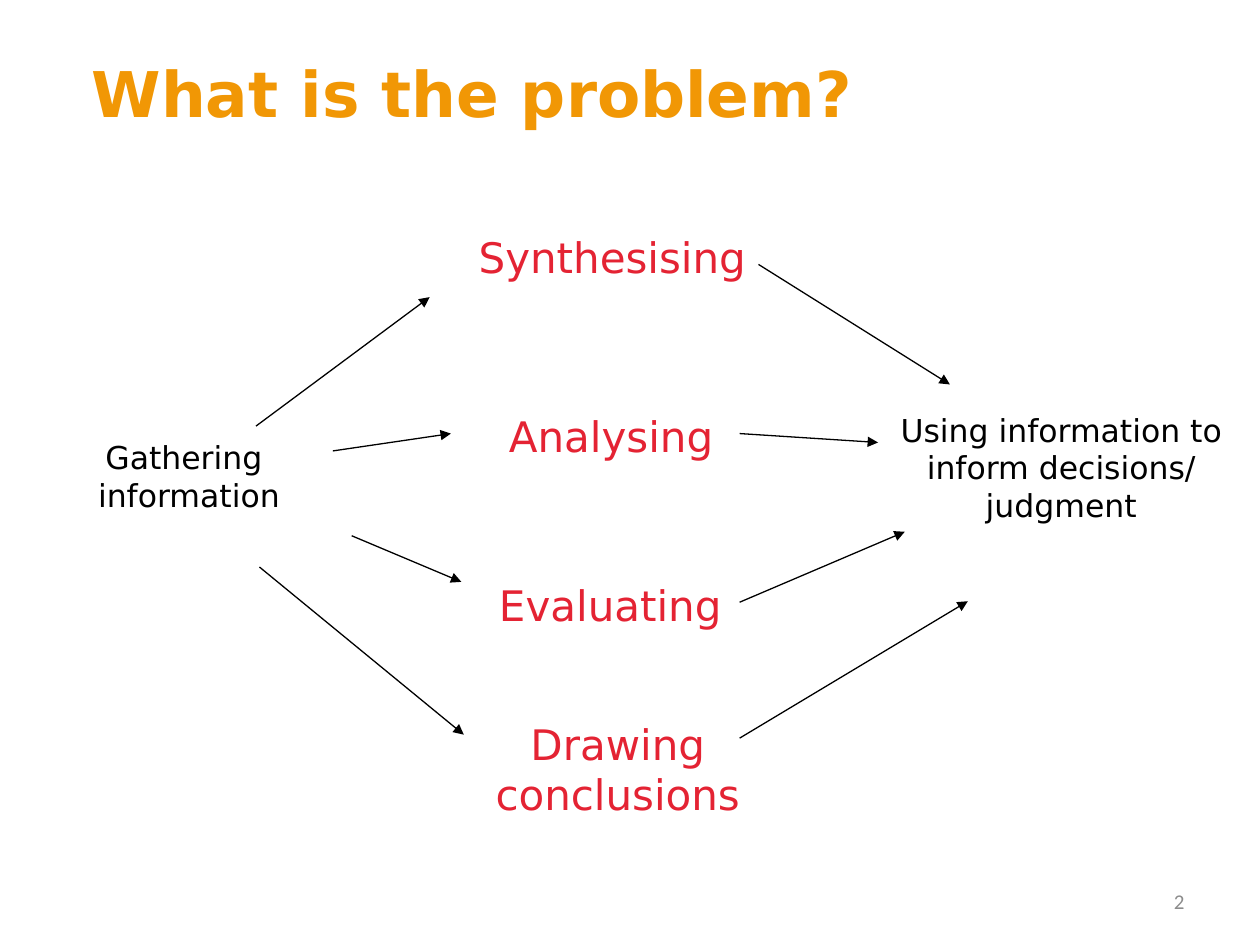
"""Build the slide that leads from gathering information to a judgment."""
from lxml.etree import SubElement
from pptx import Presentation
from pptx.dml.color import RGBColor
from pptx.enum.shapes import MSO_CONNECTOR as Connector
from pptx.enum.text import MSO_ANCHOR as Anchor, MSO_AUTO_SIZE as AutoSize, PP_ALIGN as Align
from pptx.oxml.ns import qn
from pptx.util import Cm, Pt

ORANGE = RGBColor(0xF1, 0x97, 0x05)
RED = RGBColor(0xE4, 0x23, 0x33)
BLACK = RGBColor(0x00, 0x00, 0x00)
GREY = RGBColor(0x8C, 0x8C, 0x8C)
BODY_FONT = "DejaVu Sans"
NUMBER_FONT = "Calibri"
INSET = Cm(0.15)

ENDPOINTS = [
    (["Gathering ", "information"], (0, 8.69, 7.62, 2.64)),
    (["Using information to inform decisions/ judgment"], (17.7, 8.13, 7.39, 3.38)),
]
STEPS = [
    ("Synthesising", (9.5, 4.52, 5.97, 1.35), Align.LEFT),
    ("Drawing conclusions", (9.7, 14.33, 5.51, 2.36), Align.CENTER),
    ("Evaluating", (9.91, 11.53, 5, 1.35), Align.LEFT),
    ("Analysing", (10.11, 8.13, 4.65, 1.35), Align.LEFT),
]
ARROWS = [
    ((5.16, 8.59), (8.66, 5.99)),
    ((5.23, 11.43), (9.35, 14.81)),
    ((6.71, 9.09), (9.09, 8.74)),
    ((7.09, 10.8), (9.3, 11.73)),
    ((14.91, 12.14), (18.24, 10.72)),
    ((14.91, 8.74), (17.7, 8.92)),
    ((14.91, 14.88), (19.51, 12.12)),
    ((15.29, 5.33), (19.15, 7.75)),
]


def set_insets(frame):
    """Give a text frame the same narrow margin on every side."""
    frame.margin_left = frame.margin_right = INSET
    frame.margin_top = frame.margin_bottom = INSET


def add_run(paragraph, wording, size, color, font=BODY_FONT, bold=False):
    """Append one formatted run to a paragraph."""
    run = paragraph.add_run()
    run.text = wording
    run.font.name, run.font.size, run.font.bold = font, Pt(size), bold
    run.font.color.rgb = color


def set_title(slide, wording):
    """Place and format the title placeholder."""
    title = slide.shapes.title
    title.left, title.top, title.width, title.height = map(Cm, (1.7, 1.12, 21.34, 2.97))
    frame = title.text_frame
    set_insets(frame)
    frame.auto_size = AutoSize.NONE
    frame.vertical_anchor = Anchor.TOP
    heading = frame.paragraphs[0]
    heading.alignment = Align.LEFT
    heading.line_spacing = 0.9
    add_run(heading, wording, 36, ORANGE, bold=True)


def add_label(slide, lines, box, size, color, align):
    """Add a wrapped label with one paragraph per line."""
    frame = slide.shapes.add_textbox(*map(Cm, box)).text_frame
    frame.word_wrap = True
    set_insets(frame)
    for index, line in enumerate(lines):
        paragraph = frame.add_paragraph() if index else frame.paragraphs[0]
        paragraph.alignment = align
        add_run(paragraph, line, size, color)


def add_arrow(slide, start, end):
    """Draw a thin black arrow between two points."""
    arrow = slide.shapes.add_connector(Connector.STRAIGHT, *map(Cm, start + end))
    arrow.line.color.rgb = BLACK
    arrow.line.width = Pt(0.75)
    SubElement(arrow.line._get_or_add_ln(), qn("a:tailEnd"), type="triangle")
    SubElement(arrow._element.spPr, qn("a:effectLst"))


def add_slide_number(slide, number):
    """Add the page number at the lower right."""
    frame = slide.shapes.add_textbox(*map(Cm, (18.21, 17.65, 5.92, 1.02))).text_frame
    frame.word_wrap = True
    frame.vertical_anchor = Anchor.MIDDLE
    frame.paragraphs[0].alignment = Align.RIGHT
    add_run(frame.paragraphs[0], number, 12, GREY, NUMBER_FONT)


def main():
    """Assemble and save the slide."""
    deck = Presentation()
    deck.slide_width, deck.slide_height = Cm(25.4), Cm(19.05)
    slide = deck.slides.add_slide(deck.slide_layouts[5])
    set_title(slide, "What is the problem?")
    for lines, box in ENDPOINTS:
        add_label(slide, lines, box, 18, BLACK, Align.CENTER)
    for step, box, align in STEPS:
        add_label(slide, [step], box, 24, RED, align)
    for start, end in ARROWS:
        add_arrow(slide, start, end)
    add_slide_number(slide, "2")
    deck.save("out.pptx")


if __name__ == "__main__":
    main()
